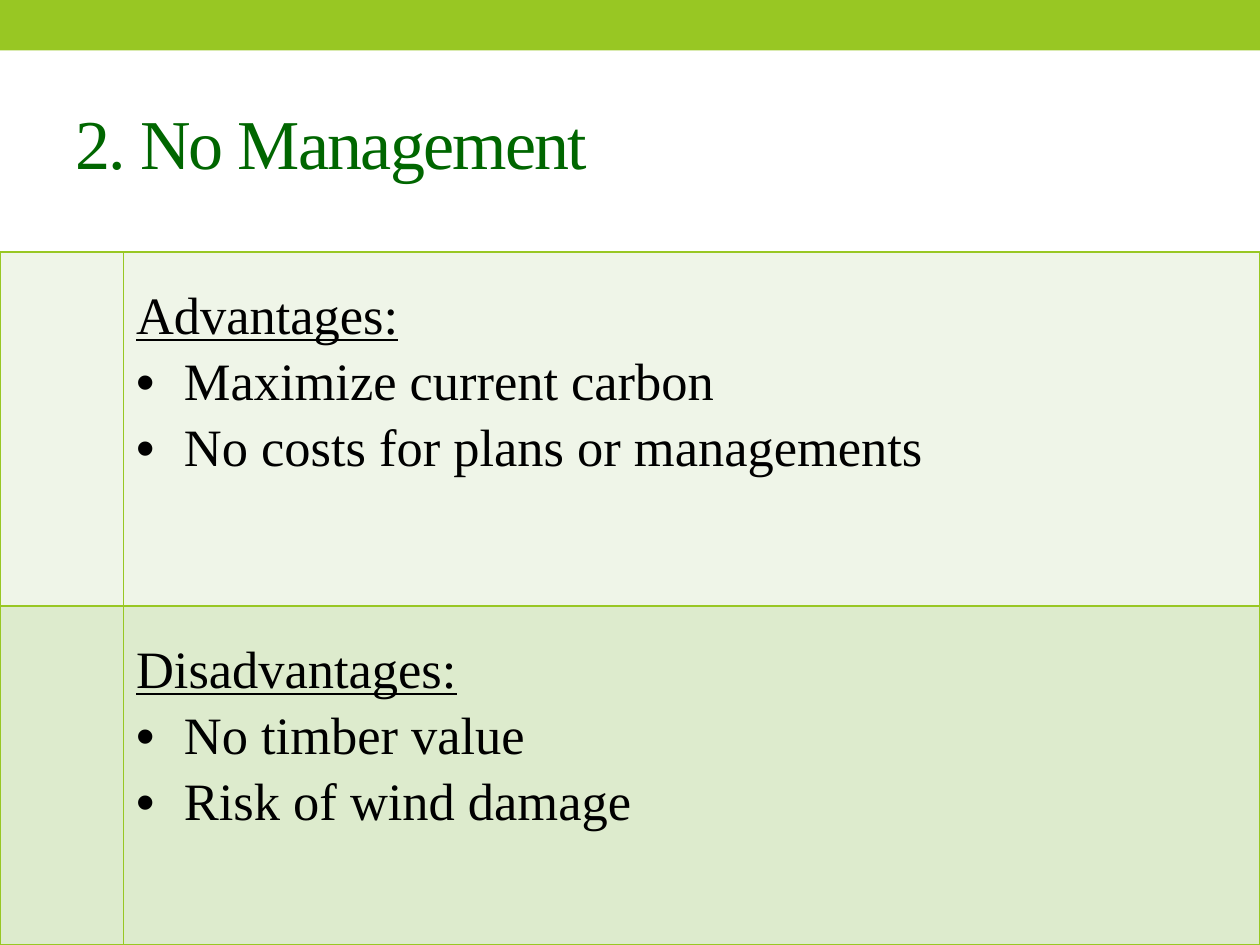
from pptx import Presentation
from pptx import util as u
from pptx.dml import color
from pptx.enum import shapes, text
from pptx.oxml import ns
from lxml import etree

GREEN = "98C723"
INDENT = u.Inches(0.38)


def rgb(value):
    return color.RGBColor.from_string(value)


def write(para, words, size=30, colour="000000", underline=False, bullet=False,
          line=None, before=0, tracking=None):
    para.space_before = u.Pt(before)
    if line:
        para.line_spacing = line
    span = para.add_run()
    span.text = words
    font = span.font
    font.name, font.size, font.underline = "Times New Roman", u.Pt(size), underline
    font.color.rgb = rgb(colour)
    if tracking:
        font._element.set("spc", str(tracking * 100))
    if bullet:
        props = para._p.get_or_add_pPr()
        props.set("marL", str(INDENT))
        props.set("indent", str(-INDENT))
        etree.SubElement(props, ns.qn("a:buFont"), typeface="Arial")
        etree.SubElement(props, ns.qn("a:buChar"), char="•")


deck = Presentation()
deck.slide_width, deck.slide_height = u.Inches(10), u.Inches(7.5)
width = deck.slide_width
page = deck.slides.add_slide(deck.slide_layouts[6])

# Band across the top
band = page.shapes.add_shape(shapes.MSO_SHAPE.RECTANGLE, 0, 0, width, u.Inches(0.4))
band.shadow.inherit = False
band.fill.solid()
band.fill.fore_color.rgb = rgb(GREEN)
band.line.fill.background()

# Title
title = page.shapes.add_textbox(u.Inches(0.5), u.Inches(0.58), u.Inches(9), u.Inches(1.08))
frame = title.text_frame
frame.word_wrap = True
frame.vertical_anchor = text.MSO_ANCHOR.MIDDLE
write(frame.paragraphs[0], "2. No Management", size=40, colour="006600", tracking=-1)

# Table: a narrow empty column beside the text
rows = [
    (2.81, "EFF5E8", "Advantages:",
     ["Maximize current carbon", "No costs for plans or managements"]),
    (2.69, "DDEBCD", "Disadvantages:",
     ["No timber value", "Risk of wind damage"]),
]
table = page.shapes.add_table(len(rows), 2, 0, u.Inches(2), width, u.Inches(5.5)).table
table.first_row = table.horz_banding = False
table.columns[0].width = u.Inches(0.98)
table.columns[1].width = width - table.columns[0].width

for row, (height, shade, heading, points) in enumerate(rows):
    table.rows[row].height = u.Inches(height)
    for cell in table.rows[row].cells:
        # Borders come before the fill in the cell properties
        props = cell._tc.get_or_add_tcPr()
        for side in ("lnL", "lnR", "lnT", "lnB"):
            border = etree.SubElement(props, ns.qn("a:" + side), w=str(u.Pt(1)))
            solid = etree.SubElement(border, ns.qn("a:solidFill"))
            etree.SubElement(solid, ns.qn("a:srgbClr"), val=GREEN)
        cell.fill.solid()
        cell.fill.fore_color.rgb = rgb(shade)
    frame = table.cell(row, 1).text_frame
    write(frame.paragraphs[0], heading, underline=True, line=1.5)
    for point in points:
        write(frame.add_paragraph(), point, bullet=True, before=4.5)

deck.save("out.pptx")
